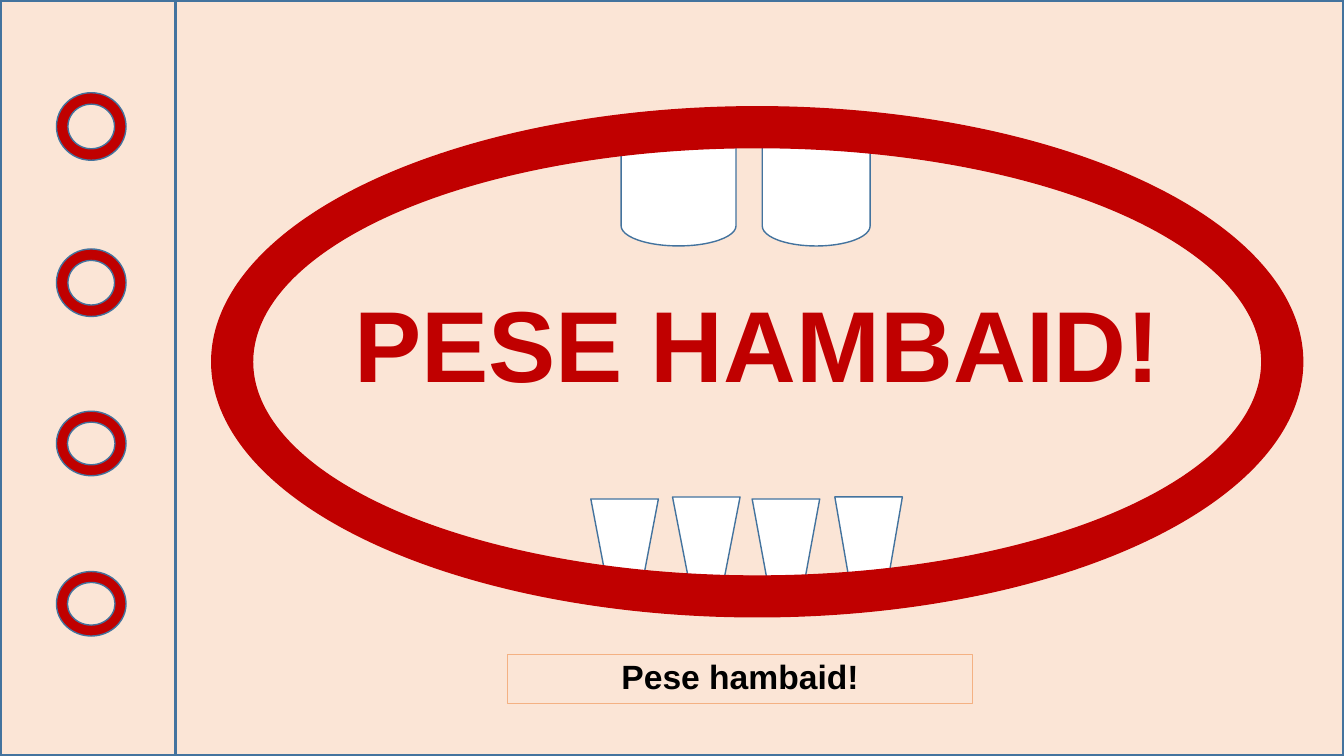
from pptx import Presentation
from pptx.dml import color
from pptx.enum import shapes, text
from pptx.util import Inches, Pt

KIND = shapes.MSO_SHAPE
RED, EDGE, SKIN, WHITE = "C00000", "43739E", "FBE5D6", "FFFFFF"


def tint(code):
    return color.RGBColor.from_string(code)


def place(item, box):
    for name, size in zip(("left", "top", "width", "height"), box):
        setattr(item, name, Inches(size))


def stroke(item, code, width):
    item.line.color.rgb = tint(code)
    item.line.width = Pt(width)


def draw(slide, kind, box, fill, edge=EDGE, width=1, turn=0, bends=()):
    item = slide.shapes.add_shape(kind, *map(Inches, box))
    item.shadow.inherit = False
    item.fill.solid()
    item.fill.fore_color.rgb = tint(fill)
    stroke(item, edge, width)
    item.rotation = turn
    for i, bend in enumerate(bends):
        item.adjustments[i] = bend
    return item


def write(item, box, words, size, ink):
    item.element.getparent().append(item.element)
    place(item, box)
    frame = item.text_frame
    looks = {"word_wrap": True, "auto_size": text.MSO_AUTO_SIZE.NONE,
             "vertical_anchor": text.MSO_ANCHOR.MIDDLE}
    for name, value in looks.items():
        setattr(frame, name, value)
    frame.text = words
    para = frame.paragraphs[0]
    looks = {"alignment": text.PP_ALIGN.CENTER, "line_spacing": 0.9,
             "space_before": Pt(10)}
    for name, value in looks.items():
        setattr(para, name, value)
    font = para.runs[0].font
    looks = {"name": "Arial", "size": Pt(size), "bold": True}
    for name, value in looks.items():
        setattr(font, name, value)
    font.color.rgb = tint(ink)


def panels(slide, box, split):
    x, y, w, h = box
    for part in ((x + split, y, w - split, h), (x, y, split, h)):
        draw(slide, KIND.RECTANGLE, part, SKIN, width=2.25)


def rings(slide, box):
    x, y, w, h = box
    for drop, tall in ((0, 0.67), (1.55, 0.67), (3.16, 0.64), (4.75, 0.64)):
        draw(slide, KIND.DONUT, (x, y + drop, w, tall), RED, bends=(0.17,))


def mouth(slide, box):
    x, y, w, h = box
    lower = ((4.57, 3.87, 0.86), (5.36, 3.89, 0.91),
             (3.76, 3.89, 0.88), (6.18, 3.87, 0.97))
    for dx, dy, tall in lower:
        draw(slide, KIND.TRAPEZOID, (x + dx, y + dy, 0.67, tall), WHITE, turn=180)
    upper = ((4.03, 0.21, 1.2, 1.14), (5.4, 0.25, 1.19, 1.07))
    for dx, dy, wide, tall in upper:
        draw(slide, KIND.FLOWCHART_DISPLAY, (x + dx, y + dy, wide, tall),
             WHITE, turn=90)
    draw(slide, KIND.BLOCK_ARC, box, RED, edge=RED, bends=(214.47, 214.46, 0.08))


def main():
    deck = Presentation()
    deck.slide_width, deck.slide_height = Inches(13.33), Inches(7.5)
    slide = deck.slides.add_slide(deck.slide_layouts[0])
    title, label = slide.placeholders
    panels(slide, (0, 0, 13.33, 7.5), 1.74)
    write(label, (5.03, 6.49, 4.62, 0.49), "Pese hambaid!", 24, "000000")
    stroke(label, "F4B183", 0.75)
    write(title, (1.85, 2.97, 11.33, 1.01), "PESE HAMBAID!", 72, RED)
    rings(slide, (0.56, 0.92, 0.69, 5.39))
    mouth(slide, (2.1, 1.06, 10.82, 5.06))
    deck.save("out.pptx")


if __name__ == "__main__":
    main()
